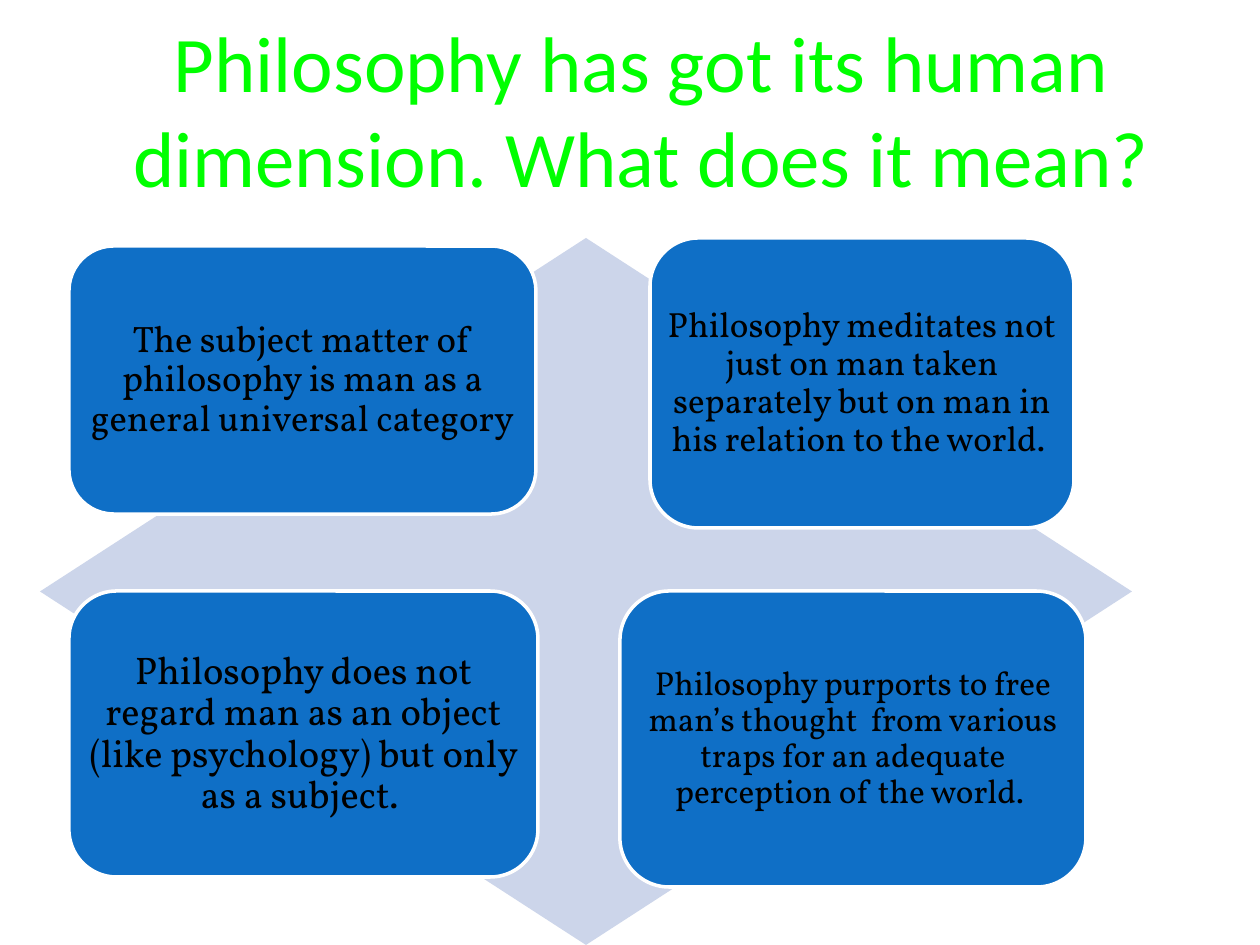
from dataclasses import dataclass

from pptx import Presentation
from pptx.dml.color import RGBColor
from pptx.enum.shapes import MSO_SHAPE as Shape
from pptx.enum.text import MSO_ANCHOR as Anchor, MSO_AUTO_SIZE as AutoSize, PP_ALIGN as Align
from pptx.util import Emu, Pt

PX_PER_INCH = 126
GREEN = RGBColor(0x00, 0xFF, 0x00)
BLUE = RGBColor(0x0F, 0x6F, 0xC6)
PALE = RGBColor(0xCC, 0xD5, 0xEA)
WHITE = RGBColor(0xFF, 0xFF, 0xFF)
BLACK = RGBColor(0x00, 0x00, 0x00)


@dataclass(frozen=True)
class Box:
    x: int
    y: int
    w: int
    h: int


@dataclass(frozen=True)
class Card:
    box: Box
    text: str
    size: int


TITLE = "Philosophy has got its human dimension. What does it mean?"
TITLE_BOX = Box(74, 45, 1134, 158)
DIAMOND_BOX = Box(40, 238, 1092, 707)
CARDS = [
    Card(Box(69, 591, 469, 286),
         "Philosophy does not regard man as an object (like psychology) but only as a subject. ", 22),
    Card(Box(69, 246, 467, 268),
         "The subject matter of philosophy is man as a general universal category", 21),
    Card(Box(650, 238, 424, 290),
         "Philosophy meditates not just on man taken separately but on man in his relation to the world. ", 20),
    Card(Box(620, 591, 466, 296),
         "Philosophy purports to free man’s thought  from various traps for an adequate perception of the world. ", 19),
]


def px(n: int) -> Emu:
    return Emu(round(n * 914400 / PX_PER_INCH))


def write(s, text: str, font: str, size: int, color: RGBColor, anchor: Anchor, spacing: float) -> None:
    tf = s.text_frame
    tf.word_wrap = True
    tf.auto_size = AutoSize.NONE
    tf.vertical_anchor = anchor
    tf.margin_left = tf.margin_right = tf.margin_top = tf.margin_bottom = 0
    p = tf.paragraphs[0]
    p.alignment = Align.CENTER
    p.line_spacing = spacing
    r = p.add_run()
    r.text = text
    r.font.name = font
    r.font.size = Pt(size)
    r.font.color.rgb = color


def add_shape(slide, kind: Shape, box: Box, fill: RGBColor):
    s = slide.shapes.add_shape(kind, px(box.x), px(box.y), px(box.w), px(box.h))
    s.shadow.inherit = False
    s.fill.solid()
    s.fill.fore_color.rgb = fill
    s.line.fill.background()
    return s


def add_title(slide) -> None:
    s = slide.shapes.title
    s.left, s.top = px(TITLE_BOX.x), px(TITLE_BOX.y)
    s.width, s.height = px(TITLE_BOX.w), px(TITLE_BOX.h)
    write(s, TITLE, "Calibri", 45, GREEN, Anchor.BOTTOM, 1.0)


def add_card(slide, card: Card) -> None:
    s = add_shape(slide, Shape.ROUNDED_RECTANGLE, card.box, BLUE)
    s.line.color.rgb = WHITE
    s.line.width = Pt(2)
    write(s, card.text, "Vollkorn", card.size, BLACK, Anchor.MIDDLE, 0.9)


def main() -> None:
    prs = Presentation()
    prs.slide_width, prs.slide_height = px(1260), px(945)
    slide = prs.slides.add_slide(prs.slide_layouts.get_by_name("Title Only"))
    add_title(slide)
    add_shape(slide, Shape.DIAMOND, DIAMOND_BOX, PALE)
    for card in CARDS:
        add_card(slide, card)
    prs.save("out.pptx")


if __name__ == "__main__":
    main()
